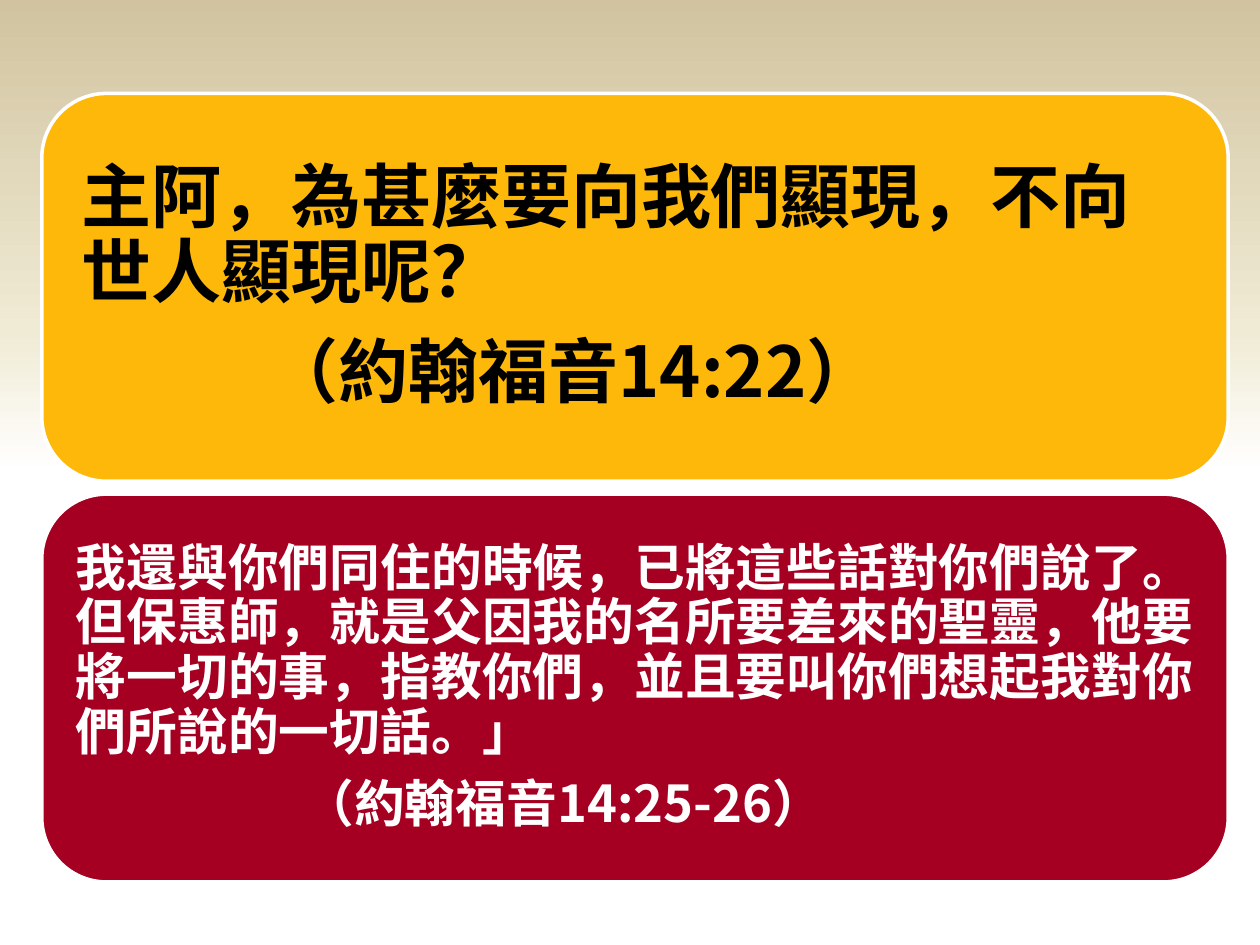
from copy import deepcopy

from lxml import etree
from pptx import Presentation
from pptx.dml.color import RGBColor
from pptx.enum.shapes import MSO_SHAPE
from pptx.enum.text import MSO_ANCHOR, PP_ALIGN
from pptx.oxml.ns import qn
from pptx.util import Pt

ROUNDED = MSO_SHAPE.ROUNDED_RECTANGLE
MIDDLE = MSO_ANCHOR.MIDDLE
LEFT = PP_ALIGN.LEFT

FONT = "Noto Sans CJK SC"
BLACK = RGBColor(0x00, 0x00, 0x00)
WHITE = RGBColor(0xFF, 0xFF, 0xFF)
CREAM = RGBColor(0xF0, 0xEB, 0xD5)
TAN = RGBColor(0xD1, 0xC3, 0x9F)
AMBER = RGBColor(0xFE, 0xB8, 0x0A)
CRIMSON = RGBColor(0xA5, 0x00, 0x21)

CARD_LEFT, CARD_TOP = 23.9, 53.4
CARD_WIDTH, CARD_HEIGHT = 678, 221.6
CARD_PITCH = 229


def add_paragraph(p, text, *, size, color, indent=0):
    p.alignment = LEFT
    p.line_spacing = 0.9
    p.space_after = Pt(round(size * 0.35))
    pPr = p._p.get_or_add_pPr()
    pPr.set("marL", str(Pt(indent)))
    pPr.set("indent", "0")
    r = p.add_run()
    r.text = text
    r.font.name = FONT
    r.font.size = Pt(size)
    r.font.bold = True
    r.font.color.rgb = color
    etree.SubElement(r._r.rPr, qn("a:ea"), typeface=FONT)


class SlideBuilder:
    def __init__(self, slide):
        self.slide = slide

    def background(self, stops, angle):
        """Fill the background with (position, colour) gradient stops."""
        fill = self.slide.background.fill
        fill.gradient()
        fill.gradient_angle = angle
        first = fill.gradient_stops[0]._gs
        for _ in range(len(stops) - len(fill.gradient_stops)):
            first.addnext(deepcopy(first))
        for stop, (position, color) in zip(fill.gradient_stops, stops):
            stop.position = position
            stop.color.rgb = color

    def card(self, row, verse, source, *, fill, color, size, inset, indent):
        """Add a rounded card with a verse and its indented reference."""
        sp = self.slide.shapes.add_shape(
            ROUNDED, Pt(CARD_LEFT), Pt(CARD_TOP + row * CARD_PITCH),
            Pt(CARD_WIDTH), Pt(CARD_HEIGHT))
        sp.shadow.inherit = False
        sp.fill.solid()
        sp.fill.fore_color.rgb = fill
        sp.line.color.rgb = WHITE
        sp.line.width = Pt(2)
        tf = sp.text_frame
        tf.word_wrap = True
        tf.vertical_anchor = MIDDLE
        tf.margin_left = tf.margin_right = Pt(inset)
        tf.margin_top = tf.margin_bottom = Pt(inset)
        add_paragraph(tf.paragraphs[0], verse, size=size, color=color)
        add_paragraph(tf.add_paragraph(), source, size=size, color=color,
                      indent=indent)


def main():
    prs = Presentation()
    prs.slide_width, prs.slide_height = Pt(720), Pt(540)
    builder = SlideBuilder(prs.slides.add_slide(prs.slide_layouts[6]))
    builder.background([(0.5, WHITE), (0.65, CREAM), (1, TAN)], angle=90)
    builder.card(
        0, "主阿，為甚麼要向我們顯現，不向世人顯現呢？", "（約翰福音14:22）",
        fill=AMBER, color=BLACK, size=40, inset=12, indent=107)
    builder.card(
        1,
        "我還與你們同住的時候，已將這些話對你們說了。"
        "但保惠師，就是父因我的名所要差來的聖靈，"
        "他要將一切的事，指教你們，並且要叫你們想起我對你們所說的一切話。」",
        "（約翰福音14:25-26）",
        fill=CRIMSON, color=WHITE, size=29, inset=8.7, indent=130)
    prs.save("out.pptx")


if __name__ == "__main__":
    main()
